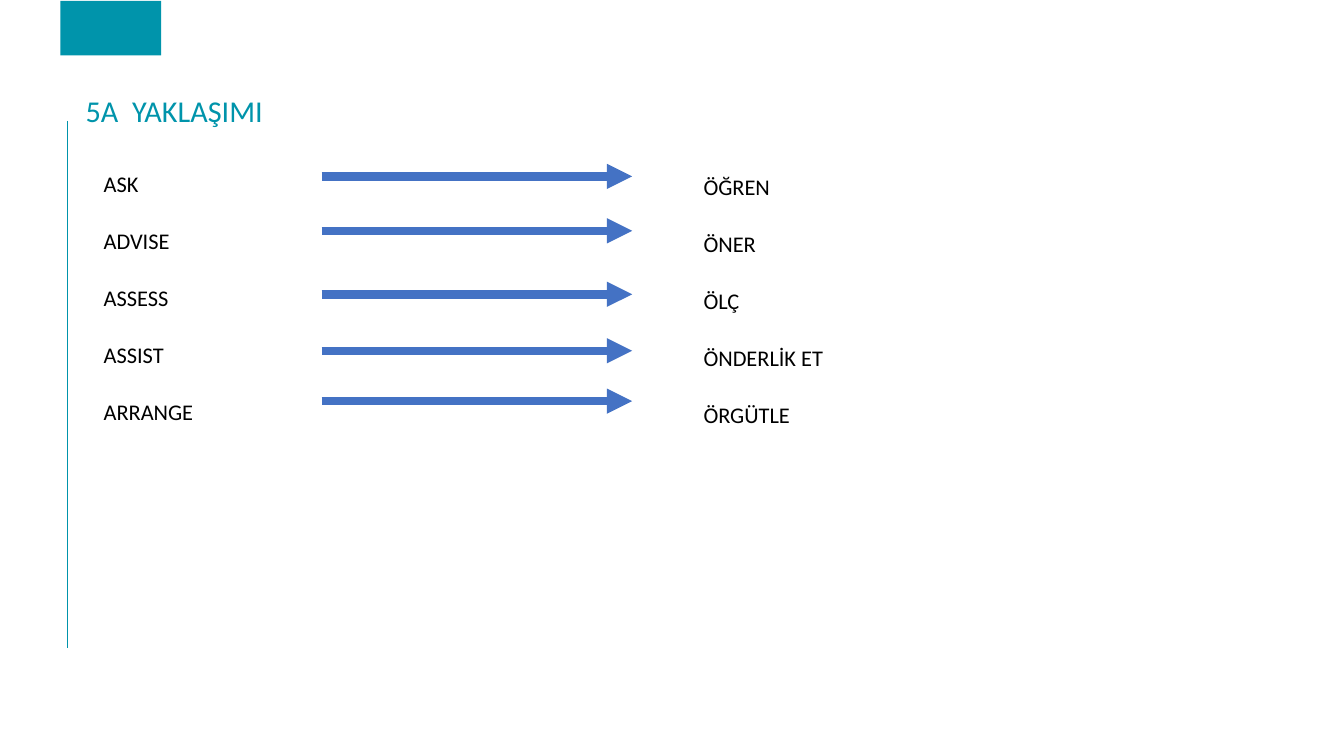
from lxml.etree import SubElement
from pptx import Presentation
from pptx.dml.color import RGBColor
from pptx.enum.shapes import MSO_CONNECTOR as Connector, MSO_SHAPE as Shape
from pptx.enum.text import MSO_ANCHOR as Anchor
from pptx.oxml.ns import qn
from pptx.util import Inches, Pt

TEAL = RGBColor(0x00, 0x94, 0xAB)
BLUE = RGBColor(0x44, 0x72, 0xC4)
BLACK = RGBColor(0x00, 0x00, 0x00)

deck = Presentation()
deck.slide_width = Inches(13.33)
deck.slide_height = Inches(7.5)
page = deck.slides.add_slide(deck.slide_layouts[6])


def add_line(left, top, right, bottom, color, width):
    line = page.shapes.add_connector(
        Connector.STRAIGHT, Inches(left), Inches(top), Inches(right), Inches(bottom))
    line.line.color.rgb = color
    line.line.width = Pt(width)
    SubElement(line._element.spPr, qn("a:effectLst"))
    return line


def add_text(left, top, width, height, lines, size, color, spacing, anchor):
    box = page.shapes.add_textbox(Inches(left), Inches(top), Inches(width), Inches(height))
    frame = box.text_frame
    frame.word_wrap = True
    frame.vertical_anchor = anchor
    for index, text in enumerate(lines):
        para = frame.add_paragraph() if index else frame.paragraphs[0]
        para.line_spacing = spacing
        para.space_before = Pt(10 if index else 0)
        span = para.add_run()
        span.text = text
        span.font.name = "Calibri"
        span.font.size = Pt(size)
        span.font.color.rgb = color


add_line(0.67, 1.2, 0.67, 6.43, TEAL, 1)

tab = page.shapes.add_shape(Shape.RECTANGLE, Inches(0.6), Inches(0.01), Inches(1), Inches(0.54))
tab.shadow.inherit = False
tab.fill.solid()
tab.fill.fore_color.rgb = TEAL
tab.line.fill.background()

add_text(0.75, 0.9, 11.98, 0.43, ["5A  YAKLAŞIMI"], 21.6, TEAL, 0.9, Anchor.MIDDLE)

english_steps = ["ASK", "ADVISE", "ASSESS", "ASSIST", "ARRANGE"]
turkish_steps = ["ÖĞREN", "ÖNER", "ÖLÇ", "ÖNDERLİK ET", "ÖRGÜTLE"]
add_text(0.93, 1.48, 11.8, 4.95, english_steps, 16, BLACK, 1.6, Anchor.TOP)
add_text(6.88, 1.51, 5.67, 5.14, turkish_steps, 16, BLACK, 1.6, Anchor.TOP)

for arrow_y in (1.75, 2.29, 2.92, 3.48, 3.98):
    arrow = add_line(3.19, arrow_y, 6.27, arrow_y, BLUE, 6)
    SubElement(arrow.line._get_or_add_ln(), qn("a:tailEnd"), type="triangle")

deck.save("out.pptx")
